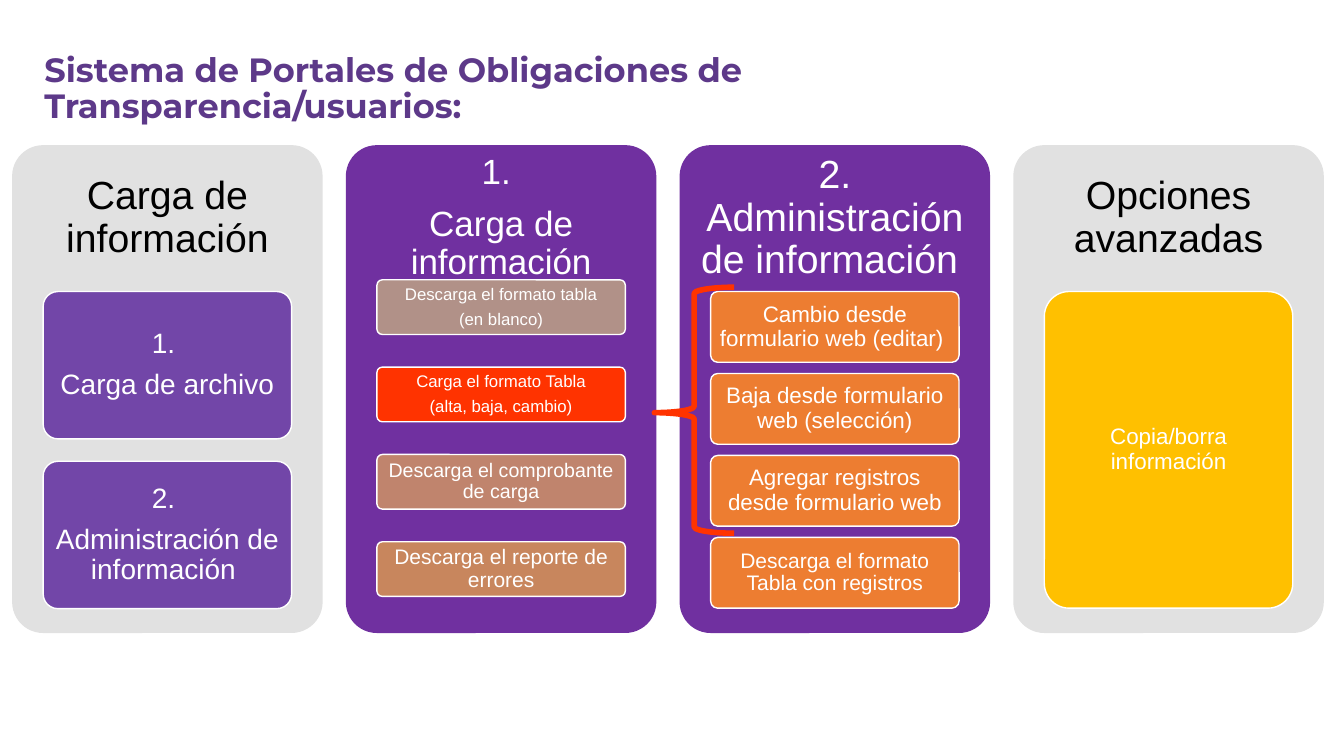
from dataclasses import dataclass
from typing import Any, NamedTuple

from pptx import Presentation
from pptx.dml.color import RGBColor as RGB
from pptx.enum.shapes import MSO_SHAPE as Kind
from pptx.enum.text import MSO_ANCHOR as Anchor, MSO_AUTO_SIZE as Fit, PP_ALIGN as Align
from pptx.util import Inches, Pt


@dataclass(frozen=True)
class Theme:
    head: str = "Montserrat"
    body: str = "Arial"
    title: str = "5D3989"
    white: str = "FFFFFF"
    black: str = "000000"
    gray: str = "E1E1E1"
    deep: str = "7030A0"
    violet: str = "7246A8"
    rose: str = "B19188"
    red: str = "FF3300"
    clay: str = "C0846D"
    tan: str = "C8865D"
    orange: str = "ED7D31"
    gold: str = "FFC000"
    huge: int = 28
    big: int = 25
    main: int = 24
    mid: int = 20
    base: int = 16
    small: int = 15
    less: int = 14
    tiny: int = 12


class Box(NamedTuple):
    left: float
    top: float
    wide: float
    high: float


class Rows(NamedTuple):
    start: float
    high: float
    pitch: float


class Card(NamedTuple):
    lines: tuple[str, ...]
    fill: str
    size: int


class Panel(NamedTuple):
    lines: tuple[str, ...]
    fill: str
    ink: str
    size: int
    inset: float
    rows: Rows
    cards: tuple[Card, ...]


T = Theme()
WIDE, HIGH = 13.33, 7.5
LEFT, TOP, PITCH = 0.12, 1.44, 3.31
COL, ROW = 3.08, 4.84
TWO, FOUR = Rows(30, 30.2, 34.8), Rows(30, 14.5, 16.8)
LOOSE, ONE = Rows(27.6, 11.2, 17.9), Rows(30, 64.9, 64.9)

PANELS = (
    Panel(("Carga de información",), T.gray, T.black, T.huge, 0.12, TWO, (
        Card(("1. ", "Carga de archivo"), T.violet, T.mid),
        Card(("2. ", "Administración de información "), T.violet, T.mid),
    )),
    Panel(("1. ", "Carga de información"), T.deep, T.white, T.big, 0.1, LOOSE, (
        Card(("Descarga el formato tabla", "(en blanco)"), T.rose, T.tiny),
        Card(("Carga el formato Tabla", "(alta, baja, cambio)"), T.red, T.tiny),
        Card(("Descarga el comprobante de carga",), T.clay, T.less),
        Card(("Descarga el reporte de errores",), T.tan, T.small),
    )),
    Panel(("2. Administración de información ",), T.deep, T.white, T.huge, 0.12, FOUR, (
        Card(("Cambio desde formulario web (editar) ",), T.orange, T.base),
        Card(("Baja desde formulario web (selección)",), T.orange, T.base),
        Card(("Agregar registros desde formulario web",), T.orange, T.base),
        Card(("Descarga el formato Tabla con registros",), T.orange, T.small),
    )),
    Panel(("Opciones avanzadas",), T.gray, T.black, T.huge, 0.12, ONE, (
        Card(("Copia/borra información",), T.gold, T.base),
    )),
)


def apply(item: Any, values: dict[str, Any]) -> None:
    for name, value in values.items():
        setattr(item, name, value)


def write(frame: Any, lines: tuple[str, ...], size: int, ink: str, inset: float,
          face: str = T.body, bold: bool = False, align: Any = Align.CENTER) -> None:
    frame.text = "\n".join(lines)
    apply(frame, {"word_wrap": True, "auto_size": Fit.NONE,
                  "vertical_anchor": Anchor.MIDDLE})
    apply(frame, {f"margin_{side}": Inches(inset)
                  for side in ("left", "top", "right", "bottom")})
    for para in frame.paragraphs:
        apply(para, {"alignment": align, "line_spacing": 0.9,
                     "space_before": Pt(0), "space_after": Pt(round(0.38 * size))})
        for run in para.runs:
            apply(run.font, {"name": face, "size": Pt(size), "bold": bold})
            run.font.color.rgb = RGB.from_string(ink)


def shape(slide: Any, kind: Any, box: Box, fill: str = "",
          line: str = "", width: float = 1) -> Any:
    item = slide.shapes.add_shape(kind, *map(Inches, box))
    item.shadow.inherit = False
    if fill:
        item.fill.solid()
        item.fill.fore_color.rgb = RGB.from_string(fill)
    else:
        item.fill.background()
    if line:
        item.line.color.rgb = RGB.from_string(line)
        item.line.width = Pt(width)
    else:
        item.line.fill.background()
    return item


def block(slide: Any, box: Box, fill: str, line: str = "") -> Any:
    item = shape(slide, Kind.ROUNDED_RECTANGLE, box, fill, line)
    item.adjustments[0] = 0.1
    return item


def draw(slide: Any, index: int, panel: Panel) -> None:
    left = LEFT + index * PITCH
    block(slide, Box(left, TOP, COL, ROW), panel.fill)
    label = slide.shapes.add_textbox(*map(Inches, Box(left, TOP, COL, 0.3 * ROW)))
    write(label.text_frame, panel.lines, panel.size, panel.ink, panel.inset)
    rows = panel.rows
    for step, card in enumerate(panel.cards):
        top = TOP + ROW * (rows.start + step * rows.pitch) / 100
        box = Box(left + 0.1 * COL, top, 0.8 * COL, ROW * rows.high / 100)
        item = block(slide, box, card.fill, T.white)
        write(item.text_frame, card.lines, card.size, T.white, 0.03)


def main() -> None:
    """Build the slide of the portal system's options and save it."""
    deck = Presentation()
    apply(deck, {"slide_width": Inches(WIDE), "slide_height": Inches(HIGH)})
    slide = deck.slides.add_slide(deck.slide_layouts[5])
    title = slide.shapes.title
    apply(title, {"left": Inches(0.34), "top": Inches(0.34),
                  "width": Inches(11.04), "height": Inches(1.1)})
    write(title.text_frame,
          ("Sistema de Portales de Obligaciones de Transparencia/usuarios:",),
          T.main, T.title, 0.1, T.head, True, Align.LEFT)
    for index, panel in enumerate(PANELS):
        draw(slide, index, panel)
    brace = shape(slide, Kind.LEFT_BRACE, Box(6.49, 2.85, 0.79, 2.44), line=T.red, width=4)
    brace.adjustments[0], brace.adjustments[1] = 0.08, 0.51
    deck.save("out.pptx")


if __name__ == "__main__":
    main()
